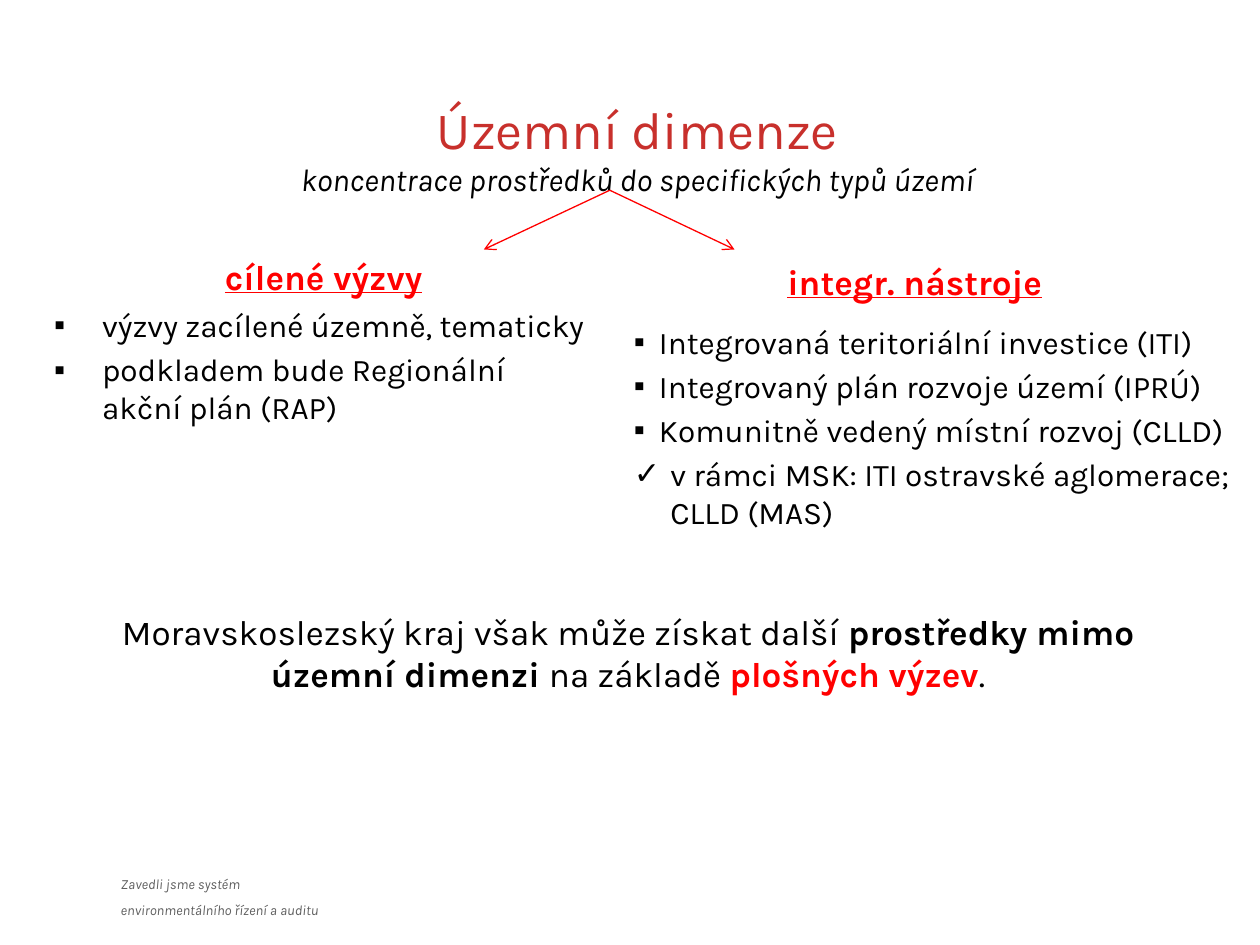
import pptx
import pptx.util
import pptx.dml.color
import pptx.enum.text
import pptx.enum.shapes
import pptx.oxml.ns
import lxml.etree

Inches, Pt = pptx.util.Inches, pptx.util.Pt
RGB = pptx.dml.color.RGBColor
ALIGN = pptx.enum.text.PP_ALIGN
ANCHOR = pptx.enum.text.MSO_ANCHOR
qn = pptx.oxml.ns.qn

BLACK = RGB(0x00, 0x00, 0x00)
RED = RGB(0xFF, 0x00, 0x00)
BRICK = RGB(0xC8, 0x30, 0x2C)
GRAY = RGB(0x5F, 0x5F, 0x5F)


def place(shape, left, top, width, height, anchor=ANCHOR.TOP):
    """Set a text shape's box and return its wrapped, fixed-size frame."""
    shape.left, shape.top = Inches(left), Inches(top)
    shape.width, shape.height = Inches(width), Inches(height)
    frame = shape.text_frame
    frame.word_wrap = True
    frame.auto_size = pptx.enum.text.MSO_AUTO_SIZE.NONE
    frame.vertical_anchor = anchor
    return frame


def style(run, size, color, bold=False, italic=False, line=False):
    font = run.font
    font.name, font.size, font.color.rgb = "Karla", Pt(size), color
    font.bold, font.italic, font.underline = bold, italic, line


deck = pptx.Presentation()
deck.slide_width, deck.slide_height = Inches(10), Inches(7.5)
slide = deck.slides.add_slide(deck.slide_layouts[4])
title, head1, list1, head2, list2 = slide.placeholders

# Footer note
box = slide.shapes.add_textbox(0, 0, 0, 0)
frame = place(box, 0.86, 6.88, 1.89, 0.41)
frame.text = "Zavedli jsme systém\nenvironmentálního řízení a auditu"
for par in frame.paragraphs:
    par.alignment = ALIGN.JUSTIFY
    par.line_spacing = 1.15
    style(par.runs[0], 8, GRAY, italic=True)
frame.paragraphs[1].space_before = Pt(4)

# Title and subtitle
frame = place(title, 0.99, 0.69, 8.14, 1.37)
frame.margin_top = Inches(0.08)
frame.text = "Územní dimenze\nkoncentrace prostředků do specifických typů území"
for par in frame.paragraphs:
    par.alignment = ALIGN.CENTER
style(frame.paragraphs[0].runs[0], 30, BRICK)
style(frame.paragraphs[1].runs[0], 18, BLACK, italic=True)

# Column headings
for head, left, top, text in (
    (head1, 0.36, 1.71, "cílené výzvy"),
    (head2, 5.05, 1.75, "integr. nástroje"),
):
    frame = place(head, left, top, 4.42, 0.7, ANCHOR.BOTTOM)
    frame.text = text
    par = frame.paragraphs[0]
    par.alignment = ALIGN.CENTER
    par.space_before = Pt(0)
    style(par.runs[0], 20, RED, bold=True, line=True)

# Column lists: bullet, indent, text
left_items = [
    ("▪", 0.38, "výzvy zacílené územně, tematicky"),
    ("▪", 0.38, "podkladem bude Regionální akční plán (RAP)"),
]
right_items = [
    ("▪", 0.2, "Integrovaná teritoriální investice (ITI)"),
    ("▪", 0.2, "Integrovaný plán rozvoje území (IPRÚ)"),
    ("▪", 0.2, "Komunitně vedený místní rozvoj (CLLD)"),
    ("✓", 0.29, "v rámci MSK: ITI ostravské aglomerace; CLLD (MAS)"),
]
for body, area, items in (
    (list1, (0.33, 2.38, 4.42, 2.84), left_items),
    (list2, (4.93, 2.51, 5.07, 2.31), right_items),
):
    frame = place(body, *area)
    frame.text = "\n".join(text for _, _, text in items)
    for i, (par, (mark, indent, _)) in enumerate(zip(frame.paragraphs, items)):
        par.space_before = Pt(3.6 if i else 0)
        props = par._p.get_or_add_pPr()
        props.set("marL", str(Inches(indent)))
        props.set("indent", str(-Inches(indent)))
        lxml.etree.SubElement(props, qn("a:buChar")).set("char", mark)
        style(par.runs[0], 18, BLACK)

# Closing statement
box = slide.shapes.add_textbox(0, 0, 0, 0)
par = place(box, 0.53, 4.8, 8.91, 0.87).paragraphs[0]
par.alignment = ALIGN.CENTER
for text, color, bold in (
    ("Moravskoslezský kraj však může získat další ", BLACK, False),
    ("prostředky mimo územní dimenzi ", BLACK, True),
    ("na základě ", BLACK, False),
    ("plošných výzev", RED, True),
    (".", BLACK, False),
):
    run = par.add_run()
    run.text = text
    style(run, 20, color, bold)

# Arrows from the subtitle to the two columns
for end in (3.84, 5.83):
    arrow = slide.shapes.add_connector(
        pptx.enum.shapes.MSO_CONNECTOR.STRAIGHT,
        Inches(4.84), Inches(1.51), Inches(end), Inches(1.98))
    arrow.line.color.rgb = RED
    arrow.line.width = Pt(0.75)
    tail = lxml.etree.SubElement(arrow.line._get_or_add_ln(), qn("a:tailEnd"))
    tail.set("type", "arrow")
    lxml.etree.SubElement(arrow._element.spPr, qn("a:effectLst"))

deck.save("out.pptx")
